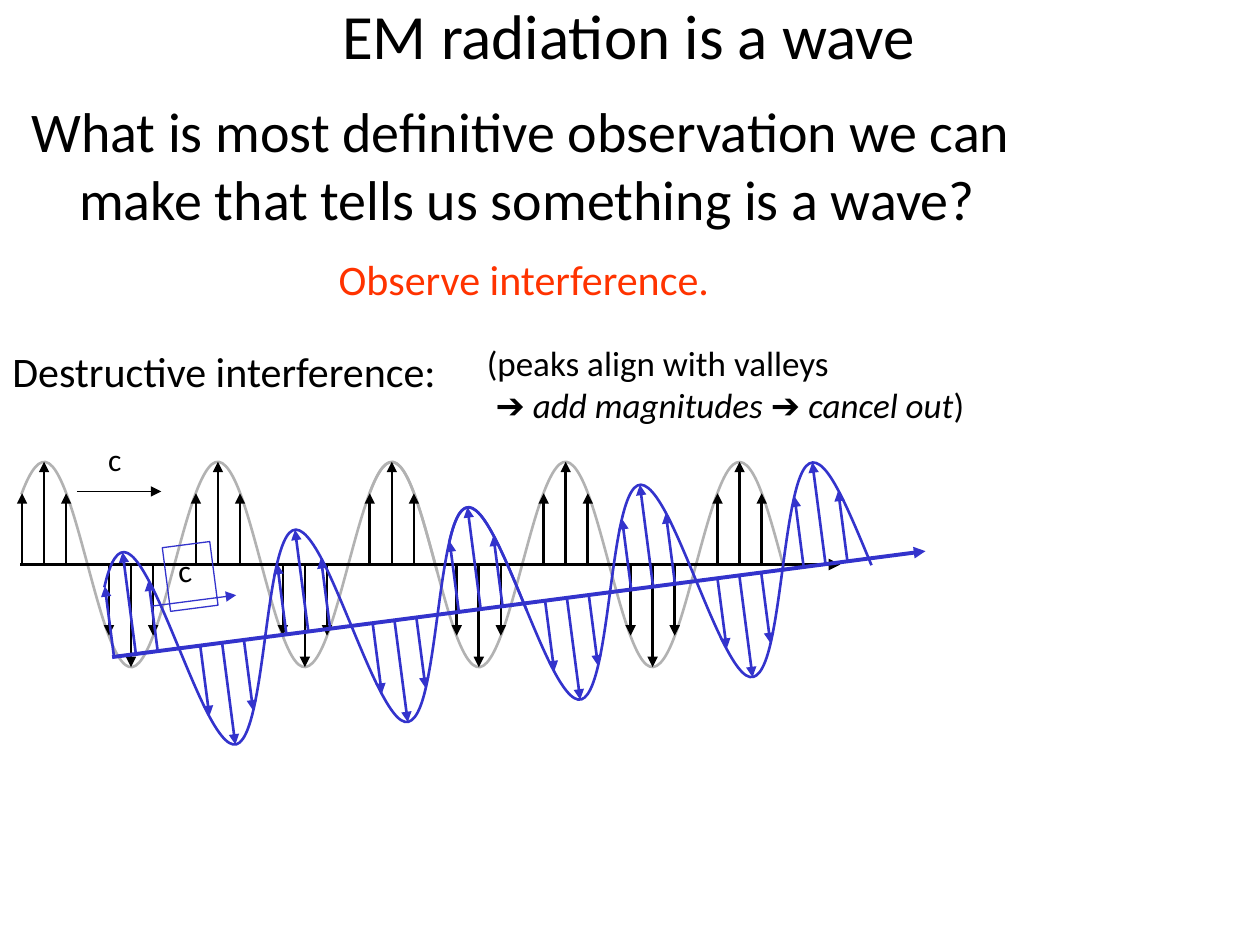
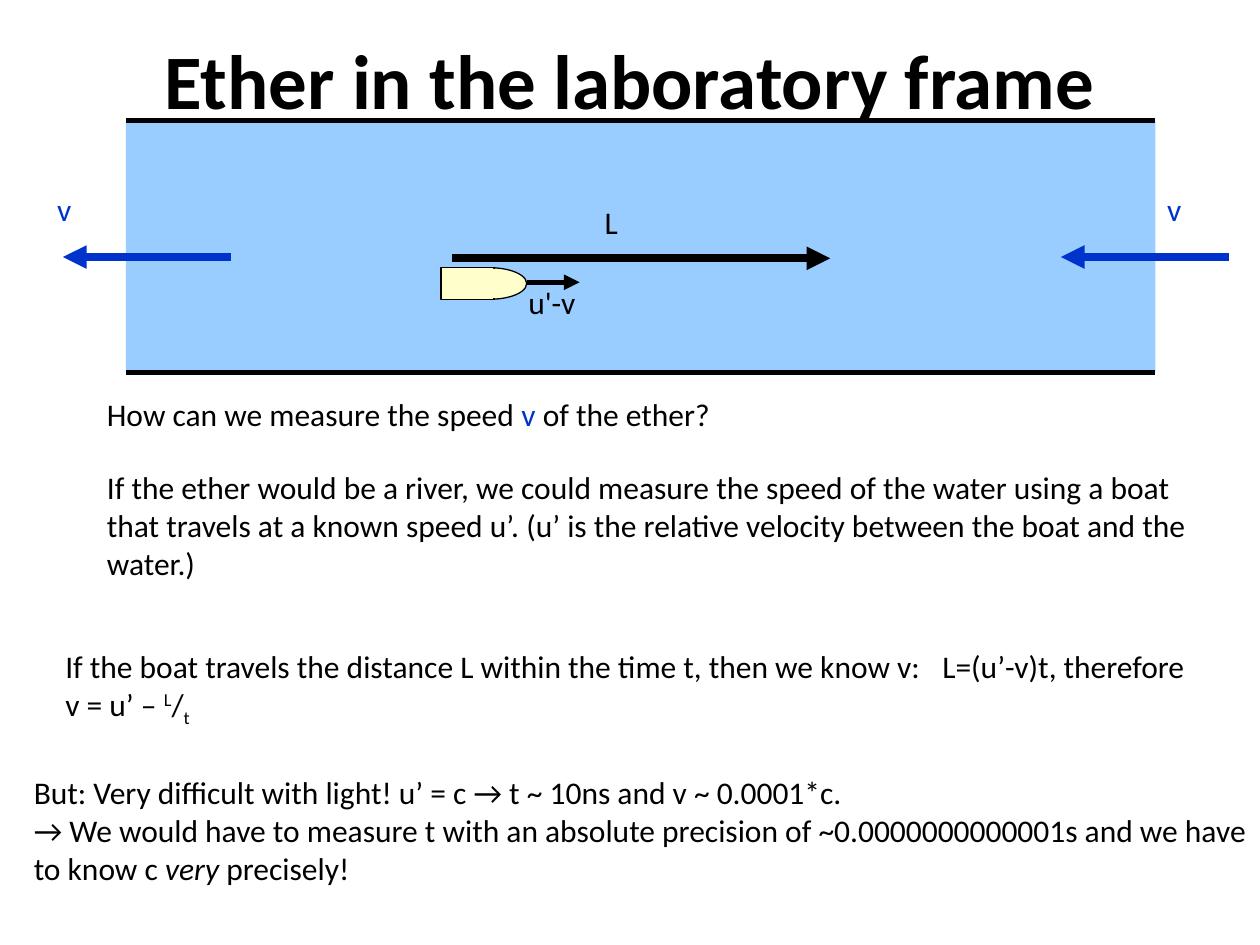
"""Two physics slides: interference of EM waves, and the ether as a river."""
import math
from dataclasses import dataclass

from lxml import etree
from pptx import Presentation
from pptx import util as u
from pptx.dml.color import RGBColor
from pptx.enum import shapes, text
from pptx.oxml import ns

BLACK = RGBColor(0x00, 0x00, 0x00)
GREY = RGBColor(0xB2, 0xB2, 0xB2)
VIOLET = RGBColor(0x33, 0x33, 0xCC)
BLUE = RGBColor(0x00, 0x33, 0xCC)
RED = RGBColor(0xFF, 0x33, 0x00)
WATER = RGBColor(0x99, 0xCC, 0xFF)
CREAM = RGBColor(0xFF, 0xFF, 0xCC)

FONT = "Calibri"
SYMBOL_FONT = "Arial"
WIDTH, HEIGHT = u.Inches(10), u.Inches(7.5)
COLUMNS, ROWS = 100, 75

AXIS_LENGTH = 65.1
PERIOD = 13.8
AMPLITUDE = 8.15
FIRST_CREST = 1.9
FIELD_SPACING = 1.75
SIDE_FIELD = 5.65
STRETCHES = ((0.1, 33.1), (27.7, 60.7))
ARCS = 15


@dataclass
class Span:
    text: str
    color: RGBColor = BLACK
    italic: bool = False
    font: str = FONT
    baseline: int = 0
    spacing: float = 0


BREAK = Span("\n")


@dataclass
class Line:
    spans: list[Span]
    margin: float = 0
    hanging: float = 0


@dataclass
class Label:
    left: float
    top: float
    width: float
    height: float
    lines: list[Line]
    size: float = 18


@dataclass
class Arrow:
    start: tuple[float, float]
    end: tuple[float, float]
    color: RGBColor = BLACK
    weight: float = 1.5
    head: bool = True


@dataclass
class Wave:
    left: float
    top: float
    tilt: float
    curve_color: RGBColor
    field_color: RGBColor
    speed_start: tuple[float, float]

    def place(self, along: float, up: float) -> tuple[float, float]:
        cos, sin = math.cos(self.tilt), math.sin(self.tilt)
        return (self.left + along * cos - up * sin,
                self.top - along * sin - up * cos)

    def arrow(self, start: tuple[float, float], end: tuple[float, float],
              weight: float = 1.5) -> Arrow:
        return Arrow(self.place(*start), self.place(*end),
                     self.field_color, weight)


def x(columns: float) -> int:
    return round(WIDTH * columns / COLUMNS)


def y(rows: float) -> int:
    return round(HEIGHT * rows / ROWS)


def plain(words: str, color: RGBColor = BLACK) -> list[Line]:
    return [Line([Span(words, color)])]


def add_span(para, span: Span, size: float) -> None:
    if span is BREAK:
        para.add_line_break()
        return
    run = para.add_run()
    run.text = span.text
    run.font.size = u.Pt(size)
    run.font.name = span.font
    run.font.italic = span.italic
    run.font.color.rgb = span.color
    properties = run._r.get_or_add_rPr()
    if span.baseline:
        properties.set("baseline", str(span.baseline * 1000))
    if span.spacing:
        properties.set("spc", str(round(span.spacing * 100)))


def draw_label(page, label: Label):
    box = page.shapes.add_textbox(x(label.left), y(label.top),
                                  x(label.width), y(label.height))
    frame = box.text_frame
    frame.word_wrap = True
    for index, line in enumerate(label.lines):
        para = frame.add_paragraph() if index else frame.paragraphs[0]
        if line.margin:
            properties = para._p.get_or_add_pPr()
            properties.set("marL", str(x(line.margin)))
            properties.set("indent", str(-x(line.hanging)))
        for span in line.spans:
            add_span(para, span, label.size)
    return box


def draw_title(page, words: str, left: float, height: float, size: float,
               bold: bool) -> None:
    box = draw_label(page, Label(left, 0, 90, height, plain(words), size))
    box.text_frame.vertical_anchor = text.MSO_ANCHOR.MIDDLE
    para = box.text_frame.paragraphs[0]
    para.alignment = text.PP_ALIGN.CENTER
    para.runs[0].font.bold = bold


def draw_arrow(parent, arrow: Arrow) -> None:
    (x1, y1), (x2, y2) = arrow.start, arrow.end
    connector = parent.shapes.add_connector(
        shapes.MSO_CONNECTOR.STRAIGHT, x(x1), y(y1), x(x2), y(y2))
    connector.line.color.rgb = arrow.color
    connector.line.width = u.Pt(arrow.weight)
    if arrow.head:
        etree.SubElement(connector.line._get_or_add_ln(),
                         ns.qn("a:tailEnd"), type="triangle")
    etree.SubElement(connector._element.spPr, ns.qn("a:effectLst"))


def draw_block(page, kind, left: float, top: float, width: float,
               height: float, fill: RGBColor, outlined: bool) -> None:
    block = page.shapes.add_shape(kind, x(left), y(top), x(width), y(height))
    block.shadow.inherit = False
    block.fill.solid()
    block.fill.fore_color.rgb = fill
    if outlined:
        block.line.color.rgb = BLACK
        block.line.width = u.Pt(0.75)
    else:
        block.line.fill.background()


def round_off(curve) -> None:
    """Turn each three straight segments into one cubic arc."""
    segments = list(curve._element.iter(ns.qn("a:lnTo")))
    for start in range(0, len(segments), 3):
        arc = etree.Element(ns.qn("a:cubicBezTo"))
        segments[start].addprevious(arc)
        for segment in segments[start:start + 3]:
            arc.append(segment[0])
            segment.getparent().remove(segment)


def draw_curve(parent, wave: Wave, first: float, last: float) -> None:
    step = (last - first) / ARCS
    rate = math.tau / PERIOD
    points = []
    for knot in range(ARCS + 1):
        along = first + knot * step
        phase = rate * (along - FIRST_CREST)
        slope = -AMPLITUDE * rate * math.sin(phase)
        for shift in (-step / 3, 0, step / 3):
            column, row = wave.place(
                along + shift, AMPLITUDE * math.cos(phase) + slope * shift)
            points.append((x(column), y(row)))
    points = points[1:-1]
    builder = parent.shapes.build_freeform(*points[0])
    builder.add_line_segments(points[1:], close=False)
    curve = builder.convert_to_shape()
    round_off(curve)
    curve.shadow.inherit = False
    curve.fill.background()
    curve.line.color.rgb = wave.curve_color
    curve.line.width = u.Pt(1.5)


def draw_wave(page, wave: Wave) -> None:
    group = page.shapes.add_group_shape()
    for first, last in STRETCHES:
        draw_curve(group, wave, first, last)
    for half in range(9):
        crest = FIRST_CREST + half * PERIOD / 2
        sign = (-1) ** half
        for side in (-1, 0, 1):
            along = crest + side * FIELD_SPACING
            reach = sign * (SIDE_FIELD if side else AMPLITUDE)
            draw_arrow(group, wave.arrow((along, 0), (along, reach)))
    draw_arrow(group, wave.arrow((0, 0), (AXIS_LENGTH, 0), 2.25))
    along, up = wave.speed_start
    draw_arrow(group, wave.arrow((along, up), (along + 6.7, up), 0.75))


def build_wave_page(page) -> None:
    tilt = math.atan2(8.4, 64.5)
    draw_title(page, "EM radiation is a wave", 4.9, 5.4, 36, False)
    question = ("What is most definitive observation we can make "
                "that tells us something is a wave?")
    draw_label(page, Label(1.5, 7.2, 90, 49.5,
                           [Line([Span(question)], 3.8, 3.8)], 32))
    draw_label(page, Label(0, 26.9, 36, 5,
                           plain("Destructive interference:"), 24))
    draw_wave(page, Wave(1.6, 44.8, 0, GREY, BLACK, (4.5, 5.8)))
    draw_label(page, Label(7.6, 34.45, 3.7, 5, plain("c")))
    draw_label(page, Label(37.1, 26.6, 57.9, 7.7, [Line([
        Span("(peaks align with valleys"), BREAK,
        Span("➔", font=SYMBOL_FONT), Span(" add magnitudes ", italic=True),
        Span("➔", font=SYMBOL_FONT), Span(" cancel out", italic=True),
        Span(")")], 1.25, 0.7)], 20))
    draw_wave(page, Wave(8.9, 52.15, tilt, VIOLET, VIOLET, (3.7, 3.6)))
    tilted = draw_label(page, Label(13.2, 43.2, 3.8, 5.1, plain("c")))
    tilted.rotation = -math.degrees(tilt)
    tilted.line.color.rgb = VIOLET
    tilted.line.width = u.Pt(0.75)
    draw_label(page, Label(25.9, 19.6, 31.7, 5,
                           plain("Observe interference.", RED), 24))


def build_ether_page(page) -> None:
    rectangle, ellipse = shapes.MSO_SHAPE.RECTANGLE, shapes.MSO_SHAPE.OVAL
    draw_title(page, "Ether in the laboratory frame", 5, 12.5, 44, True)
    left, top, width, depth = 10, 9.55, 81.7, 20
    draw_block(page, rectangle, left, top, width, depth, WATER, False)
    for bank in (top, top + depth):
        draw_arrow(page, Arrow((left, bank), (left + width, bank),
                               weight=3, head=False))
    for tip, name_left in ((5, 3.55), (84.2, 91.65)):
        draw_arrow(page, Arrow((tip + 13.3, 20.4), (tip, 20.4), BLUE, 4.5))
        draw_label(page, Label(name_left, 14.6, 3.7, 5, plain("v", BLUE)))
    draw_arrow(page, Arrow((35.9, 20.5), (65.9, 20.5), weight=4.5))
    draw_label(page, Label(47, 15.6, 3.9, 5, plain("L")))

    river = ("If the ether would be a river, we could measure the speed of the "
             "water using a boat that travels at a known speed u’. (u’ is the "
             "relative velocity between the boat and the water.)")
    distance = ("If the boat travels the distance L within the time t, "
                "then we know v:")
    light = "But: Very difficult with light! u’ = c → t ~ 10ns and v ~ 0.0001*c."
    precision = ("→ We would have to measure t with an absolute precision of "
                 "~0.0000000000001s and we have to know c ")
    draw_label(page, Label(7.5, 30.85, 86.8, 5, [Line([
        Span("How can we measure the speed "), Span("v", BLUE),
        Span(" of the ether?")])]))
    draw_label(page, Label(7.5, 36.65, 89.2, 13.1, plain(river)))

    draw_block(page, ellipse, 36, 21.25, 5.8, 2.5, CREAM, True)
    draw_block(page, rectangle, 35, 21.25, 4.2, 2.5, CREAM, True)
    draw_block(page, rectangle, 38.5, 21.35, 0.8, 2.3, CREAM, False)
    draw_arrow(page, Arrow((41.8, 22.4), (46, 22.4), weight=3))
    draw_label(page, Label(40.95, 22, 7.3, 5.1, plain("u'-v")))

    draw_label(page, Label(4.2, 50.85, 92.5, 9.1, [Line([
        Span(distance), Span(" ", spacing=8.1),
        Span("L=(u’-v)t, therefore"), BREAK, Span("v = u’ – "),
        Span("L", baseline=30), Span("/"), Span("t", baseline=-25)])]))
    draw_label(page, Label(1.7, 60.85, 98.3, 13.1, [
        Line([Span(light)]),
        Line([Span(precision), Span("very", italic=True),
              Span(" precisely!")])]))


def main() -> None:
    deck = Presentation()
    deck.slide_width, deck.slide_height = WIDTH, HEIGHT
    for build in (build_wave_page, build_ether_page):
        build(deck.slides.add_slide(deck.slide_layouts[6]))
    deck.save("out.pptx")


if __name__ == "__main__":
    main()
